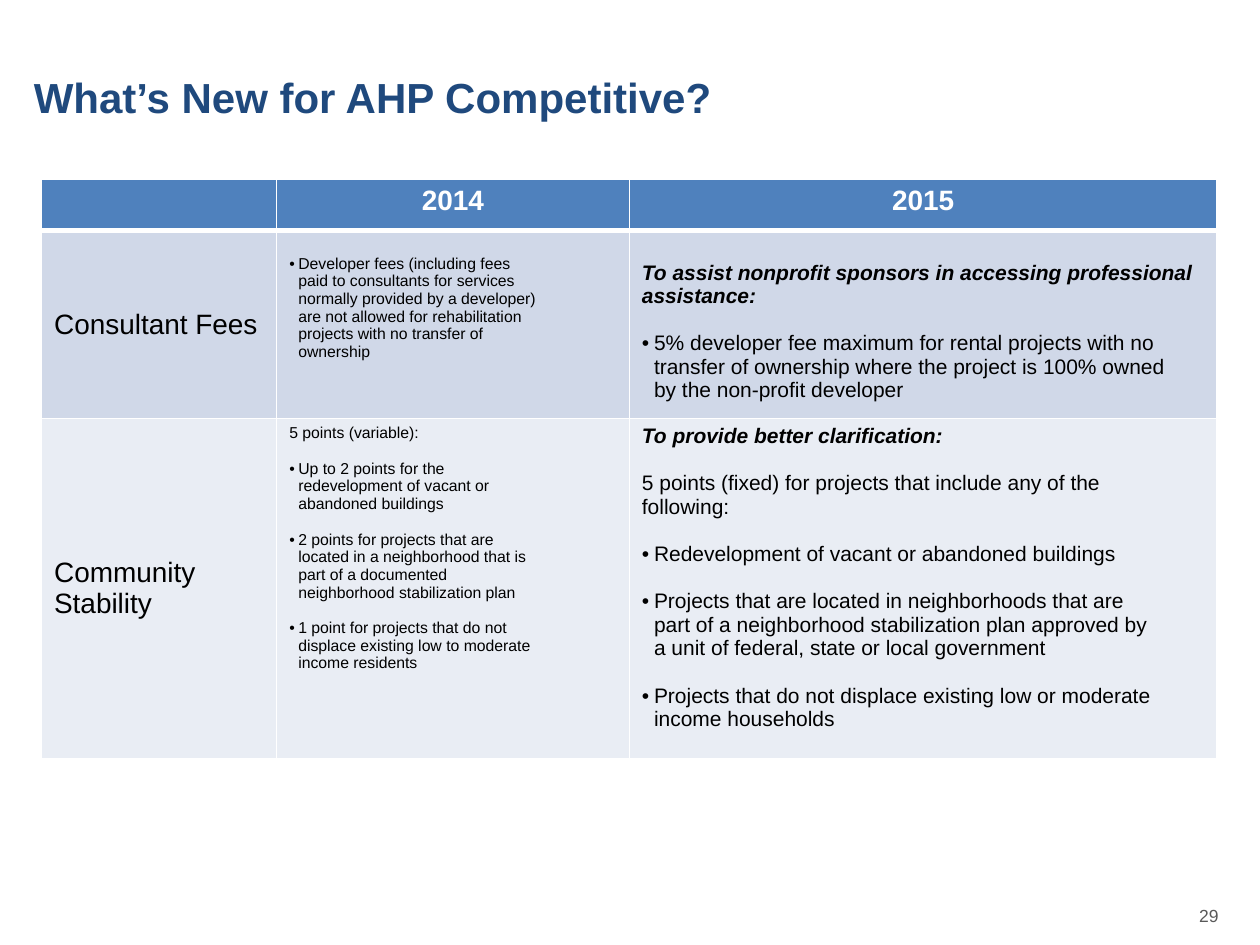
from lxml.etree import SubElement, fromstring
from pptx import Presentation
from pptx.dml.color import RGBColor
from pptx.enum.text import MSO_ANCHOR as Anchor, PP_ALIGN as Align
from pptx.oxml.ns import nsdecls, qn
from pptx.util import Inches, Pt

THEME = {
    "font": "Arial",
    "title": "1F497D", "header": "4F81BD", "bands": ["D0D8E8", "E9EDF4"],
    "white": "FFFFFF", "black": "000000", "number": "595959",
    "title_size": 24, "label_size": 16, "old_size": 9, "new_size": 12, "number_size": 10,
}

presentation = Presentation()
presentation.slide_width, presentation.slide_height = Inches(10), Inches(7.5)
slide = presentation.slides.add_slide(presentation.slide_layouts[6])


def write(frame, text, size, color=THEME["black"], bold=False, italic=False,
          align=Align.LEFT, bullet=False, indent=0, gap=0):
    """Fill the empty first paragraph of a frame, or add one more."""
    paragraph = frame.paragraphs[0]
    if paragraph.runs:
        paragraph = frame.add_paragraph()
    paragraph.alignment = align
    properties = paragraph._p.get_or_add_pPr()
    properties.set("marL", str(Inches(indent)))
    properties.set("indent", str(-Inches(indent) if bullet else 0))
    if gap:
        paragraph.space_before = Pt(gap)
    if bullet:
        SubElement(properties, qn("a:buFont"), typeface=THEME["font"])
        SubElement(properties, qn("a:buChar"), char="•")
    else:
        SubElement(properties, qn("a:buNone"))
    run = paragraph.add_run()
    run.text = text
    font = run.font
    font.name, font.size, font.bold, font.italic = THEME["font"], Pt(size), bold, italic
    font.color.rgb = RGBColor.from_string(color)


def style_cell(cell, fill, bottom=1):
    """Give a cell its fill and white rules."""
    cell.fill.solid()
    cell.fill.fore_color.rgb = RGBColor.from_string(fill)
    properties = cell._tc.get_or_add_tcPr()
    for index, side in enumerate("LRTB"):
        width = Pt(bottom if side == "B" else 1)
        properties.insert(index, fromstring(
            f'<a:ln{side} {nsdecls("a")} w="{width}"><a:solidFill>'
            f'<a:srgbClr val="{THEME["white"]}"/></a:solidFill></a:ln{side}>'))


# Each cell is a list of blocks: (kind, lines)
rows = [
    ("Consultant Fees", [
        ("bullet", ["Developer fees (including fees", "paid to consultants for services",
                    "normally provided by a developer)", "are not allowed for rehabilitation",
                    "projects with no transfer of", "ownership"]),
    ], [
        ("lead", ["To assist nonprofit sponsors in accessing professional assistance:"]),
        ("bullet", ["5% developer fee maximum for rental projects with no",
                    "transfer of ownership where the project is 100% owned",
                    "by the non-profit developer"]),
    ]),
    ("Community Stability", [
        ("plain", ["5 points (variable):"]),
        ("bullet", ["Up to 2 points for the", "redevelopment of vacant or",
                    "abandoned buildings"]),
        ("bullet", ["2 points for projects that are", "located in a neighborhood that is",
                    "part of a documented", "neighborhood stabilization plan"]),
        ("bullet", ["1 point for projects that do not", "displace existing low to moderate",
                    "income residents"]),
    ], [
        ("lead", ["To provide better clarification:"]),
        ("plain", ["5 points (fixed) for projects that include any of the", "following:"]),
        ("bullet", ["Redevelopment of vacant or abandoned buildings"]),
        ("bullet", ["Projects that are located in neighborhoods that are",
                    "part of a neighborhood stabilization plan approved by",
                    "a unit of federal, state or local government"]),
        ("bullet", ["Projects that do not displace existing low or moderate",
                    "income households"]),
    ]),
]

# Table grid
table_width = 9.33
column_shares = [0.2, 0.3, 0.5]
row_heights = [0.41, 1.49, 2.7]
table = slide.shapes.add_table(
    len(row_heights), len(column_shares), Inches(0.33), Inches(1.42),
    Inches(table_width), Inches(sum(row_heights))).table
for column, share in zip(table.columns, column_shares):
    column.width = Inches(table_width * share)
for row, height in zip(table.rows, row_heights):
    row.height = Inches(height)

# Header row
for cell, year in zip(table.rows[0].cells, ["", "2014", "2015"]):
    style_cell(cell, THEME["header"], bottom=3)
    if year:
        write(cell.text_frame, year, THEME["label_size"], THEME["white"],
              bold=True, align=Align.CENTER)

# Body rows: topic, old rule, new rule
for row_index, (topic, *rules) in enumerate(rows, 1):
    cells = table.rows[row_index].cells
    for cell in cells:
        style_cell(cell, THEME["bands"][row_index - 1])
    topic_cell, *rule_cells = cells
    topic_cell.vertical_anchor = Anchor.MIDDLE
    write(topic_cell.text_frame, topic, THEME["label_size"])
    for cell, blocks, size in zip(rule_cells, rules, [THEME["old_size"], THEME["new_size"]]):
        if row_index == 1:
            cell.margin_top = Inches(0.05 + size * 1.15 / 72)  # one line lower
        for block_index, (kind, lines) in enumerate(blocks):
            for line_index, line in enumerate(lines):
                first = line_index == 0
                write(cell.text_frame, line, size,
                      bold=kind == "lead", italic=kind == "lead",
                      bullet=kind == "bullet" and first,
                      indent=size * 0.008 if kind == "bullet" else 0,
                      gap=size * 1.13 if first and block_index else 0)

# Title and page number
for text, box, size, color, bold, align in [
    ("What’s New for AHP Competitive?", (0.17, 0.35, 9.42, 0.83),
     THEME["title_size"], THEME["title"], True, Align.LEFT),
    ("29", (9.13, 7.07, 0.64, 0.4),
     THEME["number_size"], THEME["number"], False, Align.RIGHT),
]:
    frame = slide.shapes.add_textbox(*map(Inches, box)).text_frame
    frame.word_wrap = True
    frame.vertical_anchor = Anchor.MIDDLE
    write(frame, text, size, color, bold=bold, align=align)

presentation.save("out.pptx")
